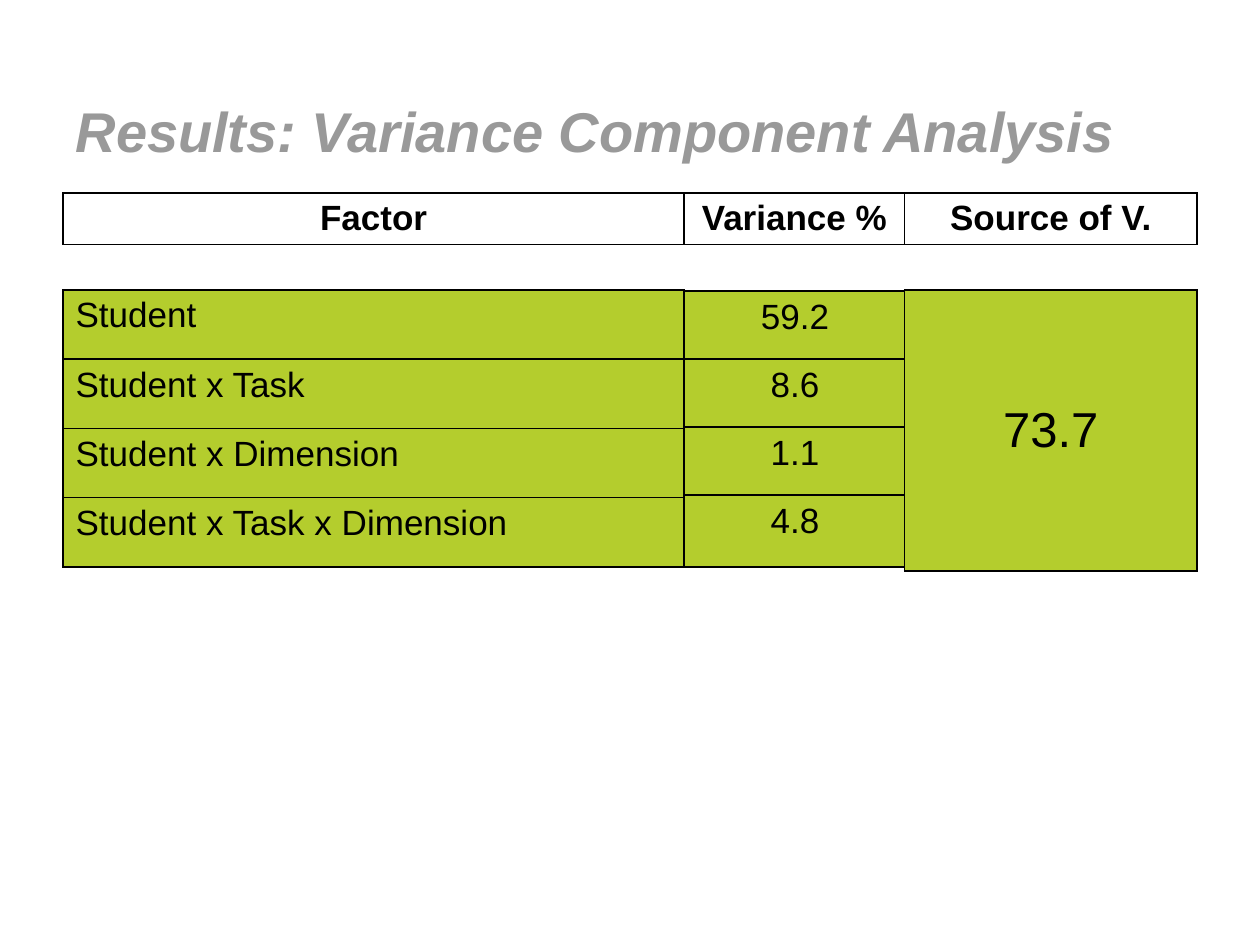
from dataclasses import dataclass

from lxml.etree import SubElement
from pptx import Presentation
from pptx.dml.color import RGBColor
from pptx.enum.text import MSO_ANCHOR, PP_ALIGN
from pptx.oxml.ns import qn
from pptx.slide import Slide
from pptx.table import _Cell
from pptx.util import Inches, Pt

COLORS = {"title": "999999", "text": "000000", "border": "000000",
          "header": "FFFFFF", "student": "B4CD2D"}
FONT = "Arial"


@dataclass
class Grid:
    left: float
    top: float
    widths: list[float]
    heights: list[float]
    rows: list[list[str]]
    fill: str = "student"
    size: int = 20
    bold: bool = False
    align: PP_ALIGN = PP_ALIGN.CENTER
    anchor: MSO_ANCHOR = MSO_ANCHOR.TOP


GRIDS = [
    Grid(0.5, 1.53, [4.93, 1.75, 2.32], [0.41],
         [["Factor", "Variance %", "Source of V."]], fill="header", bold=True),
    Grid(0.5, 2.3, [4.93], [0.55] * 4,
         [["Student"], ["Student x Task"], ["Student x Dimension"],
          ["Student x Task x Dimension"]], align=PP_ALIGN.LEFT),
    Grid(5.43, 2.31, [1.76], [0.54, 0.54, 0.54, 0.57],
         [["59.2"], ["8.6"], ["1.1"], ["4.8"]]),
    Grid(7.18, 2.3, [2.32], [2.23], [["73.7"]], size=28,
         anchor=MSO_ANCHOR.MIDDLE),
]


def rgb(name: str) -> RGBColor:
    return RGBColor.from_string(COLORS[name])


def add_borders(cell: _Cell) -> None:
    """Outline the cell; must run before its fill is set, as lines come first."""
    tc_pr = cell._tc.get_or_add_tcPr()
    for side in ("a:lnL", "a:lnR", "a:lnT", "a:lnB"):
        ln = SubElement(tc_pr, qn(side), w=str(Pt(1)))
        fill = SubElement(ln, qn("a:solidFill"))
        SubElement(fill, qn("a:srgbClr"), val=COLORS["border"])


def format_cell(cell: _Cell, text: str, grid: Grid) -> None:
    add_borders(cell)
    cell.fill.solid()
    cell.fill.fore_color.rgb = rgb(grid.fill)
    cell.vertical_anchor = grid.anchor
    cell.text = text
    p = cell.text_frame.paragraphs[0]
    p.alignment = grid.align
    p.font.name = FONT
    p.font.size = Pt(grid.size)
    p.font.bold = grid.bold
    p.font.color.rgb = rgb("text")


def add_grid(s: Slide, grid: Grid) -> None:
    table = s.shapes.add_table(
        len(grid.heights), len(grid.widths), Inches(grid.left), Inches(grid.top),
        Inches(sum(grid.widths)), Inches(sum(grid.heights))).table
    table.first_row = table.horz_banding = False
    for column, width in zip(table.columns, grid.widths):
        column.width = Inches(width)
    for row, height, texts in zip(table.rows, grid.heights, grid.rows):
        row.height = Inches(height)
        for cell, text in zip(row.cells, texts):
            format_cell(cell, text, grid)


def add_title(s: Slide, text: str) -> None:
    title = s.shapes.title
    title.left, title.top = Inches(0.5), Inches(0.53)
    title.width, title.height = Inches(9), Inches(1.01)
    tf = title.text_frame
    tf.text = text
    tf.vertical_anchor = MSO_ANCHOR.MIDDLE
    p = tf.paragraphs[0]
    p.alignment = PP_ALIGN.LEFT
    p.font.name = FONT
    p.font.size = Pt(32)
    p.font.bold = p.font.italic = True
    p.font.color.rgb = rgb("title")


def main() -> None:
    prs = Presentation()
    prs.slide_width, prs.slide_height = Inches(10), Inches(7.5)
    s = prs.slides.add_slide(prs.slide_layouts.get_by_name("Title Only"))
    add_title(s, "Results: Variance Component Analysis")
    for grid in GRIDS:
        add_grid(s, grid)
    prs.save("out.pptx")


if __name__ == "__main__":
    main()
